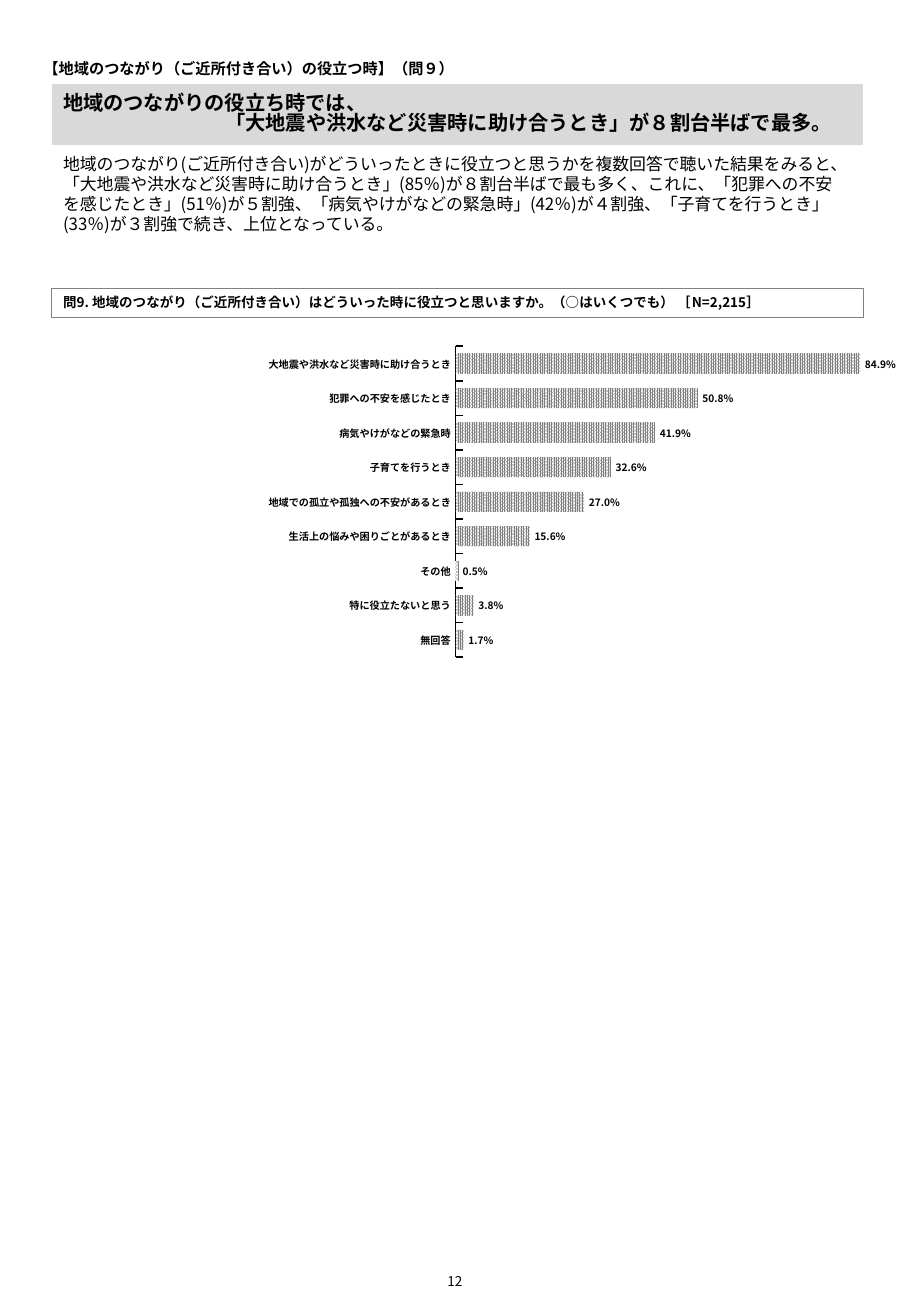
from copy import deepcopy

from lxml.etree import SubElement
from pptx import Presentation
from pptx.chart.data import CategoryChartData
from pptx.dml.color import RGBColor
from pptx.enum.chart import XL_CHART_TYPE, XL_LABEL_POSITION, XL_TICK_LABEL_POSITION, XL_TICK_MARK
from pptx.enum.dml import MSO_PATTERN
from pptx.enum.lang import MSO_LANGUAGE_ID
from pptx.enum.shapes import MSO_SHAPE
from pptx.enum.text import MSO_ANCHOR, PP_ALIGN
from pptx.oxml.ns import qn
from pptx.util import Cm, Pt

BLACK = RGBColor(0x00, 0x00, 0x00)
WHITE = RGBColor(0xFF, 0xFF, 0xFF)
GRAY = RGBColor(0x80, 0x80, 0x80)
BAND = RGBColor(0xD9, 0xD9, 0xD9)
FONT = "Noto Sans CJK JP"
LEFT, WIDTH = Cm(1.07), Cm(16.99)

HEADLINE = ["地域のつながりの役立ち時では、",
            "「大地震や洪水など災害時に助け合うとき」が８割台半ばで最多。"]
FINDINGS = [
    "地域のつながり(ご近所付き合い)がどういったときに役立つと思うかを複数回答で聴いた結果をみると、",
    "「大地震や洪水など災害時に助け合うとき」(85％)が８割台半ばで最も多く、これに、「犯罪への不安",
    "を感じたとき」(51％)が５割強、「病気やけがなどの緊急時」(42％)が４割強、「子育てを行うとき」",
    "(33％)が３割強で続き、上位となっている。",
]
QUESTION = "問9. 地域のつながり（ご近所付き合い）はどういった時に役立つと思いますか。（○はいくつでも） ［N=2,215］"
ANSWERS = {
    "大地震や洪水など災害時に助け合うとき": 0.849,
    "犯罪への不安を感じたとき": 0.508,
    "病気やけがなどの緊急時": 0.419,
    "子育てを行うとき": 0.326,
    "地域での孤立や孤独への不安があるとき": 0.27,
    "生活上の悩みや困りごとがあるとき": 0.156,
    "その他": 0.005,
    "特に役立たないと思う": 0.038,
    "無回答": 0.017,
}


def apply(target, **formats):
    """Set each format value as an attribute of the target."""
    for key, value in formats.items():
        setattr(target, key, value)


def set_font(font, size, bold):
    """Give a font the common typeface and colour."""
    apply(font, name=FONT, size=Pt(size), bold=bold)
    font.color.rgb = BLACK


def use_east_asian_font(element):
    """Repeat each Latin typeface for East Asian text."""
    for latin in list(element.iter(qn("a:latin"))):
        east_asian = deepcopy(latin)
        east_asian.tag = qn("a:ea")
        latin.addnext(east_asian)


def write(shape, lines, size, bold=False, anchor=MSO_ANCHOR.MIDDLE, **formats):
    """Fill a shape with one paragraph per line and return the paragraphs."""
    frame = shape.text_frame
    apply(frame, text="\n".join(lines), word_wrap=True, vertical_anchor=anchor)
    for paragraph in frame.paragraphs:
        apply(paragraph, **{"alignment": PP_ALIGN.LEFT, **formats})
        for run in paragraph.runs:
            set_font(run.font, size, bold)
            run.font.language_id = MSO_LANGUAGE_ID.JAPANESE
    use_east_asian_font(shape.element)
    return frame.paragraphs


def add_box(slide, top, height, line_color, line_width, fill_color=None):
    """Add a full-width rectangle."""
    box = slide.shapes.add_shape(MSO_SHAPE.RECTANGLE, LEFT, top, WIDTH, height)
    box.shadow.inherit = False
    if fill_color is None:
        box.fill.background()
    else:
        box.fill.solid()
        box.fill.fore_color.rgb = fill_color
    box.line.color.rgb = line_color
    box.line.width = Pt(line_width)
    return box


def place_plot(chart, **fractions):
    """Fix the inner plot area as fractions of the chart."""
    area = chart.element.find(".//" + qn("c:plotArea"))
    for old in area.findall(qn("c:layout")):
        area.remove(old)
    layout = SubElement(area, qn("c:layout"))
    area.insert(0, layout)
    manual = SubElement(layout, qn("c:manualLayout"))
    settings = {"layoutTarget": "inner", "xMode": "edge", "yMode": "edge", **fractions}
    for key, value in settings.items():
        SubElement(manual, qn(f"c:{key}")).set("val", str(value))


def add_answer_chart(slide):
    """Add the bar chart of answers to the question."""
    data = CategoryChartData(number_format="0.0%")
    data.categories = list(ANSWERS)
    data.add_series("Series 1", list(ANSWERS.values()))
    chart = slide.shapes.add_chart(XL_CHART_TYPE.BAR_CLUSTERED, Cm(0.18), Cm(6.96),
                                   Cm(18.69), Cm(6.99), data).chart
    apply(chart, has_title=False, has_legend=False)
    set_font(chart.font, 6, True)

    answers, share = chart.category_axis, chart.value_axis
    apply(answers, reverse_order=True, has_major_gridlines=False,
          major_tick_mark=XL_TICK_MARK.INSIDE, minor_tick_mark=XL_TICK_MARK.NONE)
    answers.format.line.color.rgb = BLACK
    answers.format.line.width = Pt(1)
    apply(share, minimum_scale=0, maximum_scale=0.9, has_major_gridlines=False,
          major_tick_mark=XL_TICK_MARK.NONE, minor_tick_mark=XL_TICK_MARK.NONE,
          tick_label_position=XL_TICK_LABEL_POSITION.NONE)
    share.format.line.fill.background()

    plot = chart.plots[0]
    apply(plot, gap_width=70, vary_by_categories=False, has_data_labels=True)
    apply(plot.data_labels, show_value=True, number_format="0.0%",
          number_format_is_linked=False, position=XL_LABEL_POSITION.OUTSIDE_END)
    bars = plot.series[0].format
    bars.fill.patterned()
    bars.fill.pattern = MSO_PATTERN.PERCENT_90
    bars.fill.fore_color.rgb = GRAY
    bars.fill.back_color.rgb = WHITE
    bars.line.fill.background()
    place_plot(chart, x=0.5, y=0.04, w=0.48, h=0.93)
    use_east_asian_font(chart.element)


def main():
    """Build the survey page."""
    deck = Presentation()
    apply(deck, slide_width=Cm(19.05), slide_height=Cm(27.51))
    slide = deck.slides.add_slide(deck.slide_layouts[6])
    add_textbox = slide.shapes.add_textbox

    page_number = add_textbox(Cm(7.29), Cm(26.04), Cm(4.45), Cm(1.47))
    write(page_number, ["12"], 8, alignment=PP_ALIGN.CENTER)

    section = add_textbox(Cm(0.66), Cm(1.12), Cm(15.01), Cm(0.64))
    write(section, ["【地域のつながり（ご近所付き合い）の役立つ時】（問９）"], 9, True)

    headline = add_box(slide, Cm(1.75), Cm(1.3), WHITE, 0.75, BAND)
    conclusion = write(headline, HEADLINE, 12, True, line_spacing=0.82)[1]
    conclusion._p.get_or_add_pPr().set("marL", str(Cm(3.39)))

    findings = add_textbox(LEFT, Cm(3.15), WIDTH, Cm(2.36))
    write(findings, FINDINGS, 10, anchor=MSO_ANCHOR.TOP,
          line_spacing=0.86, space_before=Pt(1.4))

    question = add_box(slide, Cm(6.02), Cm(0.61), GRAY, 0.5)
    write(question, [QUESTION], 8, True)

    add_answer_chart(slide)
    deck.save("out.pptx")


if __name__ == "__main__":
    main()
